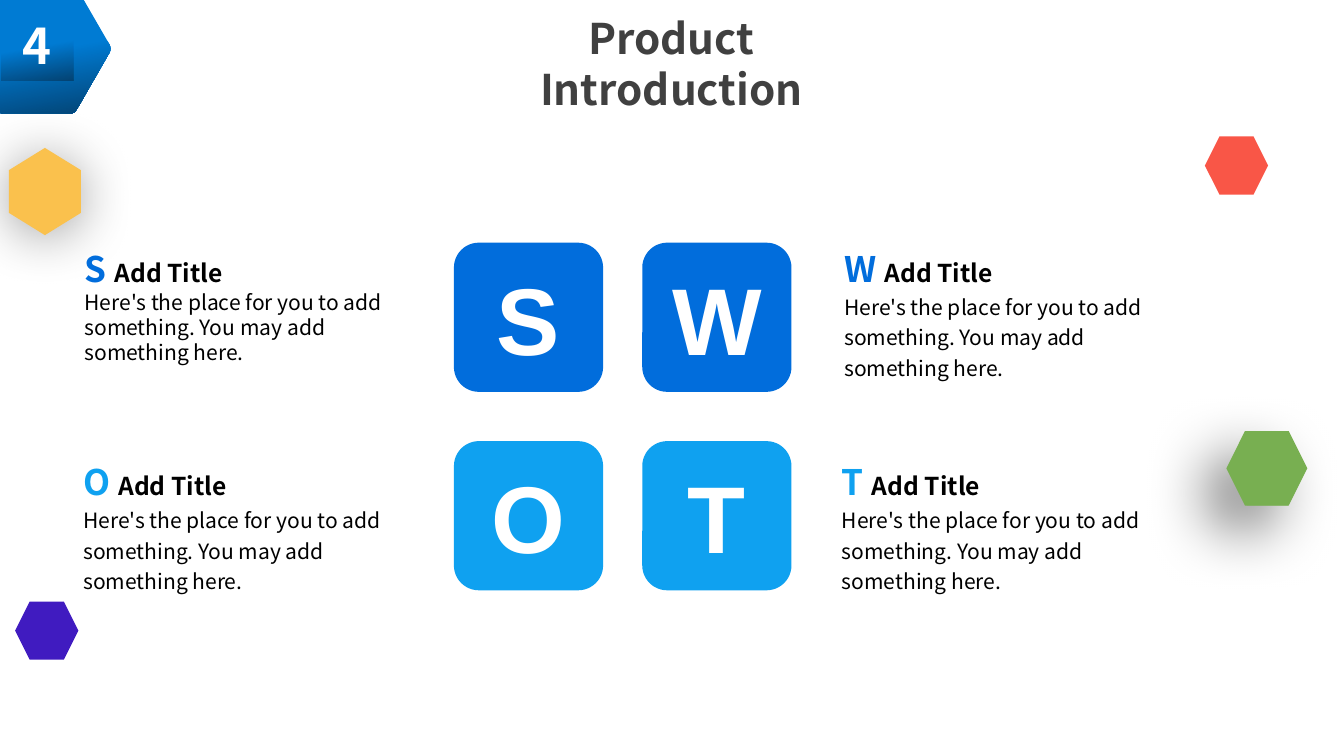
from dataclasses import dataclass
from math import cos, pi, sin

from lxml.etree import SubElement
from pptx import Presentation
from pptx.dml.color import RGBColor
from pptx.dml.fill import FillFormat
from pptx.enum.shapes import MSO_SHAPE
from pptx.enum.text import MSO_ANCHOR, MSO_AUTO_SIZE, PP_ALIGN
from pptx.oxml.ns import qn
from pptx.shapes.autoshape import Shape
from pptx.slide import Slide
from pptx.text.text import TextFrame, _Paragraph
from pptx.util import Pt

PX = 9144  # EMU in one px, 100 px to the inch

BLACK = RGBColor(0x00, 0x00, 0x00)
WHITE = RGBColor(0xFF, 0xFF, 0xFF)
GREY = RGBColor(0x40, 0x40, 0x40)
BADGE_BLUE = RGBColor(0x00, 0x7B, 0xD3)
BADGE_NAVY = RGBColor(0x03, 0x43, 0x73)
BLUE = RGBColor(0x01, 0x6D, 0xDC)
SKY = RGBColor(0x0F, 0xA1, 0xF0)
YELLOW = RGBColor(0xFA, 0xC1, 0x4D)
RED = RGBColor(0xF9, 0x56, 0x47)
GREEN = RGBColor(0x78, 0xAF, 0x51)
PURPLE = RGBColor(0x40, 0x1B, 0xC0)

SANS = "Noto Sans CJK SC"
BODY = "Here's the place for you to add something. You may add something here."
TILE_SIZE = 118


@dataclass(frozen=True)
class Box:
    left: int
    top: int
    width: int
    height: int

    def emu(self) -> tuple[int, int, int, int]:
        return self.left * PX, self.top * PX, self.width * PX, self.height * PX


@dataclass(frozen=True)
class Shadow:
    """Opacity in percent, blur and distance in points, direction in degrees."""
    opacity: int
    blur: int
    distance: int
    direction: int


@dataclass(frozen=True)
class Hexagon:
    box: Box
    color: RGBColor
    rotation: int = 0
    inset: float = 0.25
    shadow: Shadow | None = None


@dataclass(frozen=True)
class Topic:
    letter: str
    color: RGBColor
    tile_left: int
    tile_top: int
    note: Box
    body_spacing: float = 1.2


HEXAGONS = [
    Hexagon(Box(1, 123, 69, 57), YELLOW, 90, 0.309, Shadow(37, 31, 3, 90)),
    Hexagon(Box(953, 108, 50, 46), RED),
    Hexagon(Box(970, 341, 64, 59), GREEN, shadow=Shadow(50, 35, 20, 135)),
    Hexagon(Box(972, 343, 61, 57), GREEN),
    Hexagon(Box(12, 476, 50, 46), PURPLE),
]

TOPICS = [
    Topic("S", BLUE, 359, 192, Box(57, 184, 286, 114), 1.0),
    Topic("W", BLUE, 508, 192, Box(658, 184, 286, 114)),
    Topic("O", SKY, 359, 349, Box(56, 353, 287, 114)),
    Topic("T", SKY, 508, 349, Box(656, 353, 286, 114)),
]


def add_text(para: _Paragraph, text: str, *, size: int, color: RGBColor,
             bold: bool = True, font: str = SANS) -> None:
    span = para.add_run()
    span.text = text
    span.font.name = font
    span.font.size = Pt(size)
    span.font.bold = bold
    span.font.color.rgb = color


def centred_paragraph(frame: TextFrame, anchor: MSO_ANCHOR) -> _Paragraph:
    frame.word_wrap = True
    frame.vertical_anchor = anchor
    para = frame.paragraphs[0]
    para.alignment = PP_ALIGN.CENTER
    return para


def add_plain_shape(page: Slide, kind: MSO_SHAPE, box: Box) -> Shape:
    shape = page.shapes.add_shape(kind, *box.emu())
    shape.shadow.inherit = False
    shape.line.fill.background()
    return shape


def fill_solid(shape: Shape, color: RGBColor) -> None:
    shape.fill.solid()
    shape.fill.fore_color.rgb = color


def fill_badge(fill: FillFormat) -> None:
    fill.gradient()
    fill.gradient_angle = 280
    stops = zip(fill.gradient_stops, (0.52, 1.0), (BADGE_BLUE, BADGE_NAVY))
    for stop, position, color in stops:
        stop.position = position
        stop.color.rgb = color


def add_shadow(shape: Shape, shadow: Shadow) -> None:
    effects = shape.element.spPr.find(qn("a:effectLst"))
    outer = SubElement(effects, qn("a:outerShdw"), {
        "blurRad": str(Pt(shadow.blur)), "dist": str(Pt(shadow.distance)),
        "dir": str(shadow.direction * 60000), "algn": "ctr", "rotWithShape": "0"})
    color = SubElement(outer, qn("a:srgbClr"), val=str(BLACK))
    SubElement(color, qn("a:alpha"), val=str(shadow.opacity * 1000))


def rounded_hexagon(center_x: float, center_y: float, radius: float,
                    rounding: float = 0.07) -> list[tuple[float, float]]:
    """Outline points in EMU, each corner smoothed along a quadratic curve."""
    corners = [(center_x + radius * cos(step * pi / 3),
                center_y + radius * sin(step * pi / 3)) for step in range(6)]
    points = []
    for index, corner in enumerate(corners):
        before, after = corners[index - 1], corners[(index + 1) % 6]
        for t in (0, 0.25, 0.5, 0.75, 1):
            to_before, to_after = rounding * (1 - t) ** 2, rounding * t ** 2
            points.append(tuple(
                PX * (c + to_before * (b - c) + to_after * (a - c))
                for b, c, a in zip(before, corner, after)))
    return points


def add_badge(page: Slide) -> None:
    for radius in (59.5, 59):
        start, *others = rounded_hexagon(29, 38.5, radius)
        builder = page.shapes.build_freeform(*start)
        builder.add_line_segments(others)
        outline = builder.convert_to_shape()
        outline.shadow.inherit = False
        outline.line.fill.background()
        fill_badge(outline.fill)
    number = add_plain_shape(page, MSO_SHAPE.RECTANGLE, Box(1, 7, 57, 57))
    fill_badge(number.fill)
    para = centred_paragraph(number.text_frame, MSO_ANCHOR.TOP)
    add_text(para, "4", size=28, color=WHITE)


def add_hexagon(page: Slide, hexagon: Hexagon) -> None:
    shape = add_plain_shape(page, MSO_SHAPE.HEXAGON, hexagon.box)
    shape.adjustments[0] = hexagon.inset
    shape.rotation = hexagon.rotation
    fill_solid(shape, hexagon.color)
    if hexagon.shadow:
        add_shadow(shape, hexagon.shadow)


def add_topic(page: Slide, topic: Topic) -> None:
    box = Box(topic.tile_left, topic.tile_top, TILE_SIZE, TILE_SIZE)
    tile = add_plain_shape(page, MSO_SHAPE.ROUNDED_RECTANGLE, box)
    fill_solid(tile, topic.color)
    para = centred_paragraph(tile.text_frame, MSO_ANCHOR.MIDDLE)
    add_text(para, topic.letter, size=54, color=WHITE, font="Arial")

    frame = page.shapes.add_textbox(*topic.note.emu()).text_frame
    frame.word_wrap = True
    heading, body = frame.paragraphs[0], frame.add_paragraph()
    heading.line_spacing = 1.2
    add_text(heading, f"{topic.letter} ", size=20, color=topic.color)
    add_text(heading, "Add Title", size=14, color=BLACK)
    body.line_spacing = topic.body_spacing
    add_text(body, BODY, size=12, color=BLACK, bold=False)


def add_title(page: Slide) -> None:
    title = page.shapes.title
    title.left, title.top, title.width, title.height = Box(421, 10, 220, 108).emu()
    frame = title.text_frame
    frame.auto_size = MSO_AUTO_SIZE.NONE
    frame.margin_left = frame.margin_right = frame.margin_top = frame.margin_bottom = 0
    para = centred_paragraph(frame, MSO_ANCHOR.TOP)
    add_text(para, "Product Introduction", size=24, color=GREY)


def main() -> None:
    deck = Presentation()
    deck.slide_width, deck.slide_height = 1063 * PX, 591 * PX
    page = deck.slides.add_slide(deck.slide_layouts[5])
    add_title(page)
    add_badge(page)
    for hexagon in HEXAGONS:
        add_hexagon(page, hexagon)
    for topic in TOPICS:
        add_topic(page, topic)
    deck.save("out.pptx")


if __name__ == "__main__":
    main()
